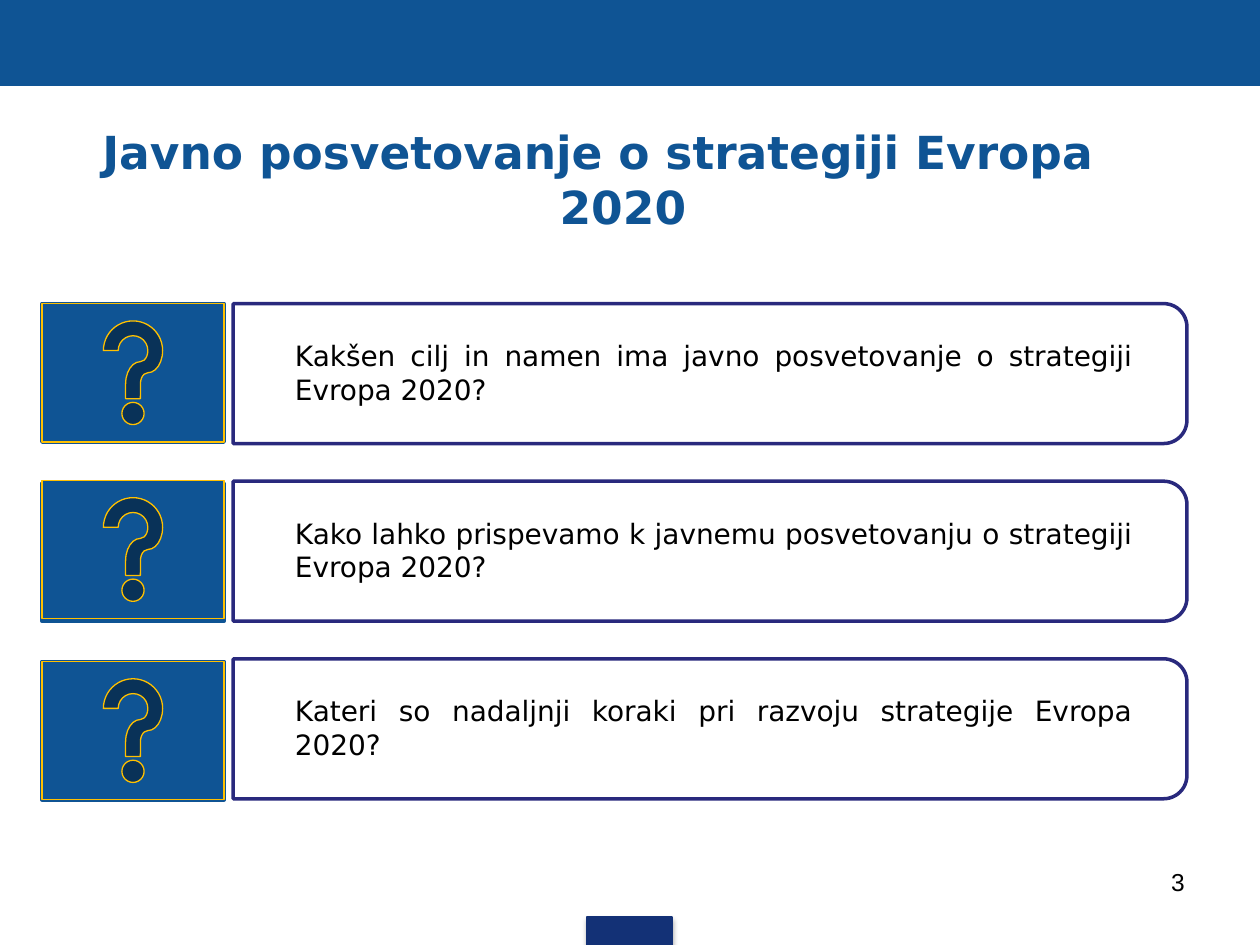
from lxml.etree import SubElement as Sub
from pptx import Presentation
from pptx.dml.color import RGBColor as Rgb
from pptx.enum.shapes import MSO_SHAPE as Kind
from pptx.enum.text import MSO_ANCHOR as Anchor, PP_ALIGN as Align
from pptx.oxml.ns import qn
from pptx.util import Pt

HUES = {
    "blue": "0F5494",
    "navy": "133176",
    "edge": "29297D",
    "gold": "FFC000",
    "white": "FFFFFF",
    "black": "000000",
}
SANS = "DejaVu Sans"
ROWS = [
    (173.5, 173.5, "Kakšen cilj in namen ima javno posvetovanje o strategiji Evropa 2020?"),
    (276, 274.5, "Kako lahko prispevamo k javnemu posvetovanju o strategiji Evropa 2020?"),
    (378, 378, "Kateri so nadaljnji koraki pri razvoju strategije Evropa 2020?"),
]
PITCH = 101.5


def hue(name):
    return Rgb.from_string(HUES[name])


def add_box(slide, kind, box, fill, line, width=0.75):
    shape = slide.shapes.add_shape(kind, *map(Pt, box))
    shape.shadow.inherit = False
    if fill:
        shape.fill.solid()
        shape.fill.fore_color.rgb = hue(fill)
    else:
        shape.fill.background()
    shape.line.color.rgb = hue(line)
    shape.line.width = Pt(width)
    return shape


def add_text(slide, box, text, align, style, anchor=Anchor.TOP):
    frame = slide.shapes.add_textbox(*map(Pt, box)).text_frame
    frame.word_wrap = True
    frame.vertical_anchor = anchor
    par = frame.paragraphs[0]
    par.alignment = align
    run = par.add_run()
    run.text = text
    look = {"name": SANS, **style}
    for key, value in look.items():
        setattr(run.font, key, value)
    run.font.color.rgb = hue("black")
    return par, run


def add_shade(shape):
    props = shape._element.spPr.find(qn("a:effectLst"))
    shade = Sub(props, qn("a:outerShdw"), blurRad=str(Pt(3.1)),
                dist=str(Pt(1.8)), dir="5400000", rotWithShape="0")
    tint = Sub(shade, qn("a:srgbClr"), val=HUES["black"])
    Sub(tint, qn("a:alpha"), val="35000")


def add_title(slide, text):
    par, run = add_text(slide, (18, 65.5, 648, 73.5), text, Align.CENTER,
                        {"size": Pt(26), "bold": True}, Anchor.MIDDLE)
    run.font.color.rgb = hue("blue")
    props = par._p.get_or_add_pPr()
    props.set("marL", str(Pt(28)))
    props.set("indent", str(Pt(-28)))


def add_panel(slide, top, text):
    long, high = 545, 80
    left = 133.25 + (long - high) / 2
    panel = add_box(slide, Kind.ROUND_2_SAME_RECTANGLE,
                    (left, top - (long - high) / 2, high, long),
                    "white", "edge", 2)
    panel.rotation = 90
    tint = panel._element.spPr.find(qn("a:solidFill"))[0]
    Sub(tint, qn("a:alpha"), val="90000")
    add_text(slide, (161.5, top + 16.5, 493, 46), text, Align.JUSTIFY,
             {"size": Pt(16)})


def main():
    deck = Presentation()
    deck.slide_width, deck.slide_height = Pt(720), Pt(540)
    slide = deck.slides.add_slide(deck.slide_layouts[6])
    add_box(slide, Kind.RECTANGLE, (0, 0, 720, 49), "blue", "blue")
    add_shade(add_box(slide, Kind.RECTANGLE, (335.5, 524, 48.5, 16),
                      "navy", "navy"))
    add_title(slide, "Javno posvetovanje o strategiji Evropa 2020")
    add_text(slide, (516, 492, 168, 37.5), "3", Align.RIGHT,
             {"size": Pt(14), "name": "Arial"})
    for i, (top, key, text) in enumerate(ROWS):
        add_box(slide, Kind.RECTANGLE, (24, top, 104, 79), None, "blue", 2.25)
        add_box(slide, Kind.ACTION_BUTTON_HELP, (24, key, 104, 79),
                "blue", "gold")
        add_panel(slide, 173.5 + i * PITCH, text)
    deck.save("out.pptx")


if __name__ == "__main__":
    main()
